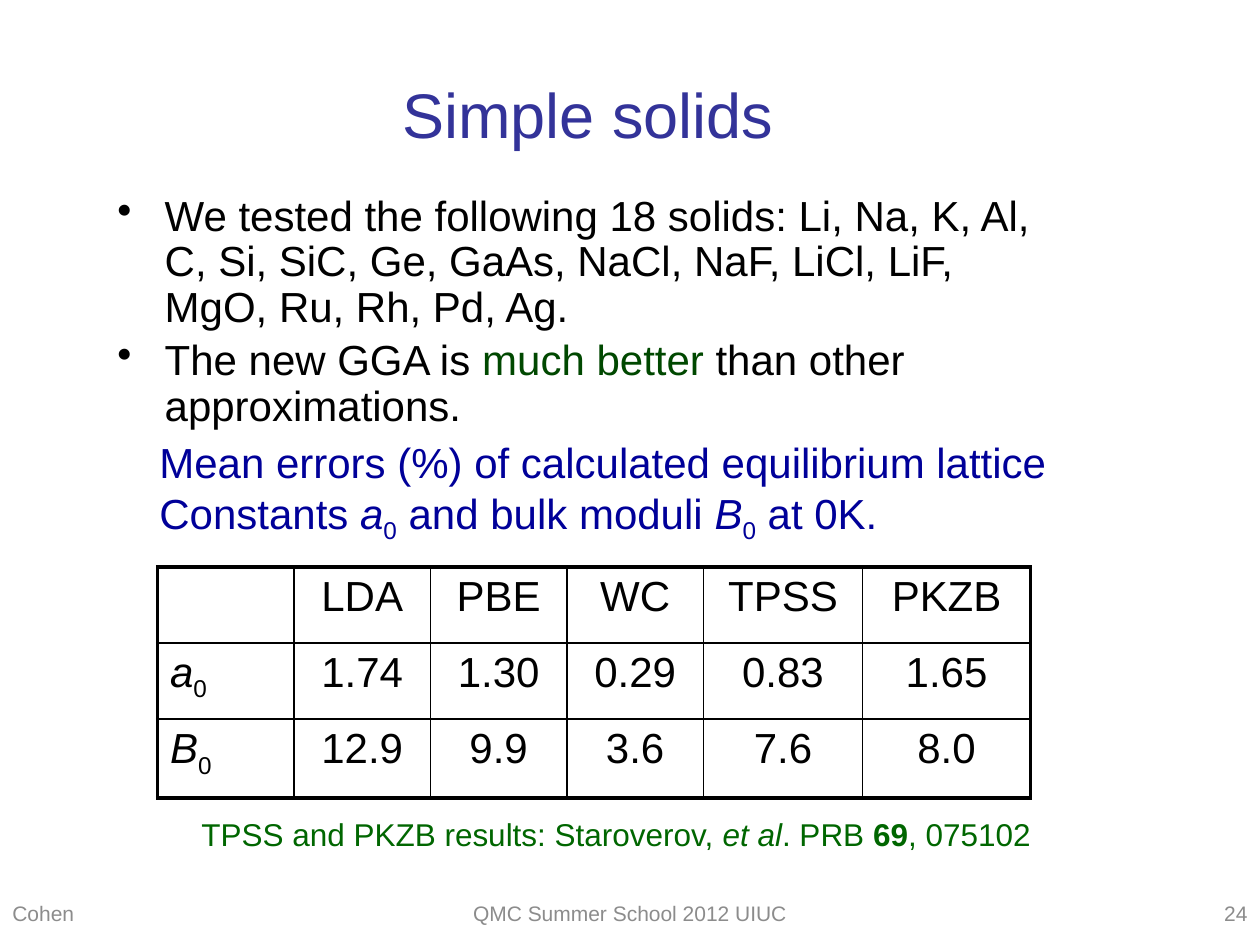
"""Build the slide on errors of density functionals for simple solids."""
from dataclasses import dataclass
from typing import Optional

from lxml.etree import SubElement
from pptx import Presentation
from pptx.dml.color import RGBColor
from pptx.enum.text import MSO_ANCHOR as Anchor, PP_ALIGN as Align
from pptx.oxml.ns import qn
from pptx.util import Pt

BLACK, GREY, NAVY = "000000", "8C8C8C", "000099"
TITLE, LEAF, GREEN = "333399", "004800", "006600"


@dataclass
class Part:
    text: str
    slant: bool = False
    bold: bool = False
    sub: bool = False
    tint: Optional[str] = None


@dataclass
class Box:
    left: float
    top: float
    width: float
    height: float
    lines: list
    size: float
    tint: str
    align: Align = Align.LEFT
    anchor: Anchor = Anchor.TOP
    wrap: bool = True


def color(code: str) -> RGBColor:
    return RGBColor.from_string(code)


def write(para, parts: list, size: float, tint: str, align=Align.LEFT) -> None:
    para.alignment = align
    font = para.font
    font.name, font.size = "Arial", Pt(size)
    font.color.rgb = color(tint)
    for part in parts:
        run = para.add_run()
        run.text = part.text
        if part.slant:
            run.font.italic = True
        if part.bold:
            run.font.bold = True
        if part.tint:
            run.font.color.rgb = color(part.tint)
        if part.sub:
            run._r.get_or_add_rPr().set("baseline", "-25000")


def place(shape, box: Box) -> None:
    shape.left, shape.top = Pt(box.left), Pt(box.top)
    shape.width, shape.height = Pt(box.width), Pt(box.height)
    frame = shape.text_frame
    frame.word_wrap, frame.vertical_anchor = box.wrap, box.anchor
    for i, parts in enumerate(box.lines):
        para = frame.add_paragraph() if i else frame.paragraphs[0]
        write(para, parts, box.size, box.tint, box.align)


def draw(slide, box: Box):
    shape = slide.shapes.add_textbox(0, 0, 0, 0)
    place(shape, box)
    return shape.text_frame


def bullet(para, first: bool) -> None:
    props = para._p.get_or_add_pPr()
    props.set("marL", str(Pt(27)))
    props.set("indent", str(Pt(-27)))
    para.line_spacing = 0.9
    if not first:
        para.space_before = Pt(4.8)
    mark = props.makeelement(qn("a:buChar"), {"char": "•"})
    props.insert_element_before(mark, "a:tabLst", "a:defRPr", "a:extLst")


def border(cell, widths: dict) -> None:
    props = cell._tc.get_or_add_tcPr()
    for side, width in widths.items():
        line = SubElement(props, qn(f"a:ln{side}"), w=str(Pt(width)))
        fill = SubElement(line, qn("a:solidFill"))
        SubElement(fill, qn("a:srgbClr"), val=BLACK)


def grid(slide, rows: list, wide: list, high: list) -> None:
    table = slide.shapes.add_table(
        len(rows), len(wide), Pt(90), Pt(324), Pt(sum(wide)), Pt(sum(high))).table
    table.first_row = table.horz_banding = False
    for col, width in zip(table.columns, wide):
        col.width = Pt(width)
    for r, (row, height) in enumerate(zip(rows, high)):
        table.rows[r].height = Pt(height)
        for c, parts in enumerate(row):
            cell = table.cell(r, c)
            edge = {"L": c == 0, "R": c == len(wide) - 1,
                    "T": r == 0, "B": r == len(rows) - 1}
            border(cell, {side: 2.25 if out else 1 for side, out in edge.items()})
            cell.fill.background()
            write(cell.text_frame.paragraphs[0], parts, 24, BLACK,
                  Align.CENTER if c else Align.LEFT)


def sign(name: str) -> list:
    return [Part(name, slant=True), Part("0", sub=True)]


def main() -> None:
    deck = Presentation()
    deck.slide_width, deck.slide_height = Pt(720), Pt(540)
    slide = deck.slides.add_slide(deck.slide_layouts[5])

    feet = [(0, 150, "Cohen", Align.LEFT),
            (150, 420, "QMC Summer School 2012 UIUC", Align.CENTER),
            (570, 150, "24", Align.RIGHT)]
    for left, width, text, align in feet:
        draw(slide, Box(left, 504, width, 36, [[Part(text)]], 12, GREY,
                        align, Anchor.MIDDLE))

    place(slide.shapes.title, Box(30, 21, 612, 87, [[Part("Simple solids")]],
                                  36, TITLE, Align.CENTER, Anchor.MIDDLE))

    points = [
        [Part("We tested the following 18 solids: Li, Na, K, Al, C, Si, SiC, Ge, "
              "GaAs, NaCl, NaF, LiCl, LiF, MgO, Ru, Rh, Pd, Ag.")],
        [Part("The new GGA is "), Part("much better", tint=LEAF),
         Part(" than other approximations.")]]
    body = draw(slide, Box(60, 108, 552, 144, points, 24, BLACK))
    for i, para in enumerate(body.paragraphs):
        bullet(para, i == 0)

    heads = ["LDA", "PBE", "WC", "TPSS", "PKZB"]
    lattice = ["1.74", "1.30", "0.29", "0.83", "1.65"]
    moduli = ["12.9", "9.9", "3.6", "7.6", "8.0"]
    rows = [[lead] + [[Part(text)] for text in texts] for lead, texts in
            (([], heads), (sign("a"), lattice), (sign("B"), moduli))]
    grid(slide, rows, [78] * 4 + [91, 96], [43.5, 43.5, 45])

    lead = [[Part("Mean errors (%) of calculated equilibrium lattice")],
            [Part("Constants "), *sign("a"), Part(" and bulk moduli "),
             *sign("B"), Part(" at 0K.")]]
    draw(slide, Box(84, 246, 526, 65.5, lead, 24, NAVY, wrap=False))

    cite = [Part("TPSS and PKZB results: Staroverov, "), Part("et al", slant=True),
            Part(". PRB "), Part("69", bold=True), Part(", 075102")]
    draw(slide, Box(108, 462, 528, 29, [cite], 18, GREEN))

    deck.save("out.pptx")


if __name__ == "__main__":
    main()
